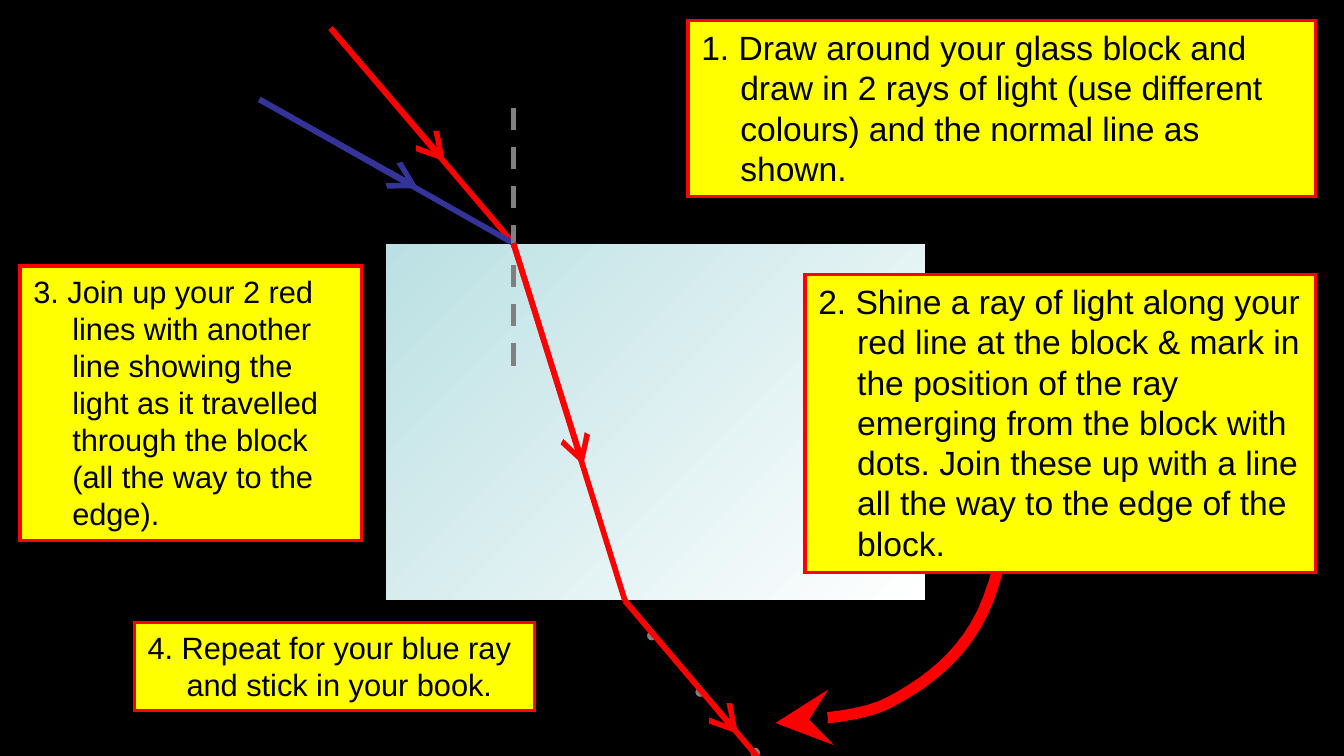
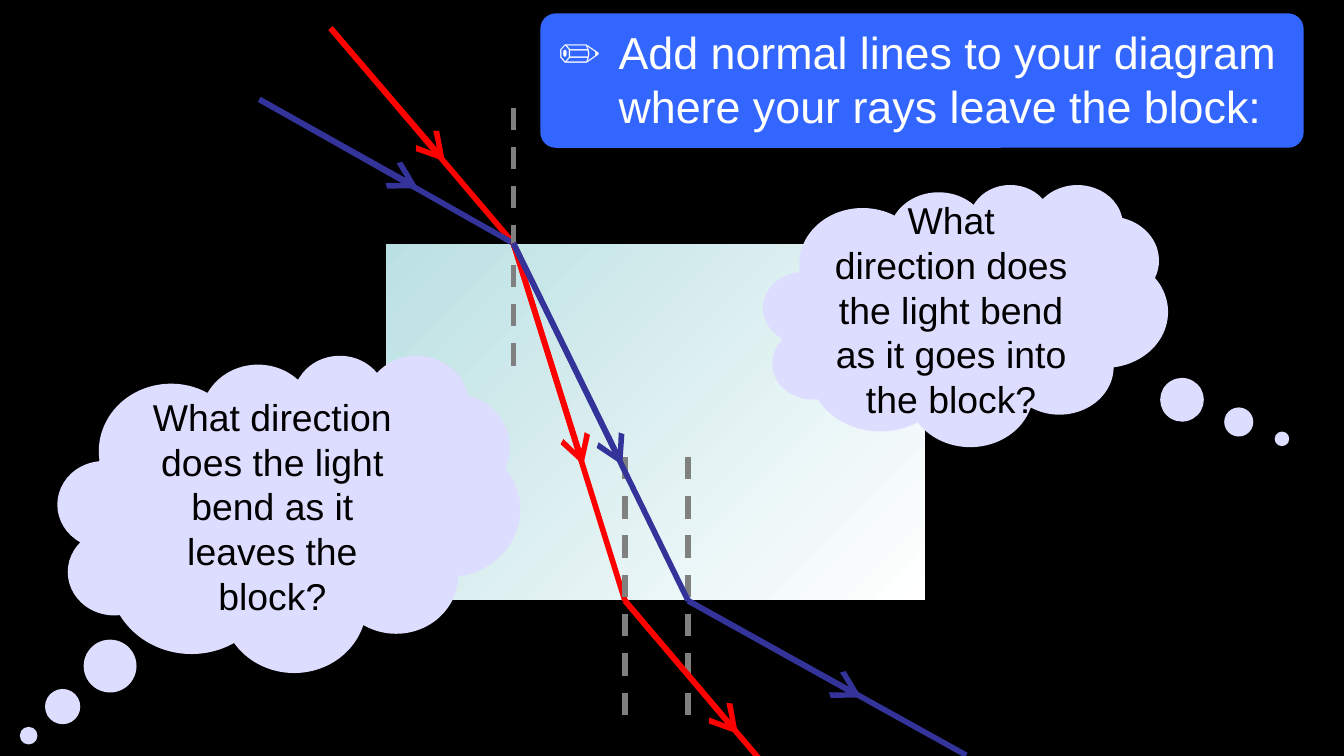
from pptx import Presentation
from pptx import util as u
from pptx.dml.color import RGBColor
from pptx.enum import dml, shapes, text
from pptx.oxml import ns
from lxml import etree

BLACK = RGBColor(0x00, 0x00, 0x00)
WHITE = RGBColor(0xFF, 0xFF, 0xFF)
RED = RGBColor(0xFF, 0x00, 0x00)
BLUE = RGBColor(0x33, 0x33, 0x99)
GREY = RGBColor(0x80, 0x80, 0x80)
YELLOW = RGBColor(0xFF, 0xFF, 0x00)
GLASS = RGBColor(0xBB, 0xE0, 0xE3)
LILAC = RGBColor(0xDD, 0xDD, 0xFF)
BANNER = RGBColor(0x33, 0x66, 0xFF)

FONT = "Arial"
ENTRY = (3.82, 1.81)
RED_EXIT = (4.65, 4.47)
BLUE_EXIT = (5.12, 4.47)
NORMAL_LENGTH = 2.01


def new_slide(deck):
    slide = deck.slides.add_slide(deck.slide_layouts[6])
    slide.background.fill.solid()
    slide.background.fill.fore_color.rgb = BLACK
    return slide


def add_shape(slide, preset, box, fill=None, outline=None, weight=0.75):
    shape = slide.shapes.add_shape(preset, *[u.Inches(n) for n in box])
    shape.shadow.inherit = False
    if fill is not None:
        shape.fill.solid()
        shape.fill.fore_color.rgb = fill
    if outline is None:
        shape.line.fill.background()
    else:
        shape.line.color.rgb = outline
        shape.line.width = u.Pt(weight)
        etree.SubElement(shape.line._get_or_add_ln(), ns.qn("a:miter"), lim="800000")
    return shape


def write(shape, words, size, color=BLACK, align=text.PP_ALIGN.LEFT,
          anchor=text.MSO_ANCHOR.TOP, hanging=0):
    frame = shape.text_frame
    frame.word_wrap = True
    frame.vertical_anchor = anchor
    paragraph = frame.paragraphs[0]
    paragraph.alignment = align
    if hanging:
        properties = paragraph._p.get_or_add_pPr()
        properties.set("marL", str(u.Inches(hanging)))
        properties.set("indent", str(-u.Inches(hanging)))
    run = paragraph.add_run()
    run.text = words
    run.font.name = FONT
    run.font.size = u.Pt(size)
    run.font.color.rgb = color
    return paragraph


def add_arrowhead(line, kind):
    etree.SubElement(line._get_or_add_ln(), ns.qn("a:tailEnd"),
                     type=kind, w="lg", len="lg")


def add_line(slide, start, end, color, arrow=False, dashed=False):
    line = slide.shapes.add_connector(
        shapes.MSO_CONNECTOR.STRAIGHT, *[u.Inches(n) for n in start + end])
    line.line.color.rgb = color
    line.line.width = u.Pt(3)
    if dashed:
        line.line.dash_style = dml.MSO_LINE.DASH
    if arrow:
        add_arrowhead(line.line, "arrow")
    etree.SubElement(line._element.spPr, ns.qn("a:effectLst"))


def add_ray(slide, start, arrow_tip, end, color):
    add_line(slide, start, arrow_tip, color, arrow=True)
    add_line(slide, start, end, color)


def add_normal(slide, x, top):
    add_line(slide, (x, top), (x, top + NORMAL_LENGTH), GREY, dashed=True)


def add_block_with_incoming_rays(slide):
    block = add_shape(slide, shapes.MSO_SHAPE.RECTANGLE,
                      (2.87, 1.81, 4.02, 2.66), outline=BLACK)
    block.fill.gradient()
    block.fill.gradient_angle = 315
    for stop, color, position in zip(block.fill.gradient_stops, (GLASS, WHITE), (0, 1)):
        stop.color.rgb = color
        stop.position = position
    add_ray(slide, (2.46, 0.21), (3.31, 1.2), ENTRY, RED)
    add_ray(slide, (1.93, 0.74), (3.11, 1.4), ENTRY, BLUE)
    add_normal(slide, ENTRY[0], 0.8)


def add_red_ray_inside(slide):
    add_ray(slide, ENTRY, (4.34, 3.46), RED_EXIT, RED)


def add_red_ray_leaving(slide):
    add_ray(slide, RED_EXIT, (5.49, 5.46), (6, 6.06), RED)


def add_step(slide, box, words, size):
    step = add_shape(slide, shapes.MSO_SHAPE.RECTANGLE, box, YELLOW, RED, 1.75)
    write(step, words, size, hanging=0.29)
    step.text_frame.auto_size = text.MSO_AUTO_SIZE.SHAPE_TO_FIT_TEXT


def add_thought(slide, box, pointer, words):
    cloud = add_shape(slide, shapes.MSO_SHAPE.CLOUD_CALLOUT, box, LILAC)
    cloud.adjustments[0], cloud.adjustments[1] = pointer
    write(cloud, words, 20, align=text.PP_ALIGN.CENTER, anchor=text.MSO_ANCHOR.MIDDLE)


def bezier_point(p0, p1, p2, p3, t):
    s = 1 - t
    return tuple(s**3 * a + 3 * s * s * t * b + 3 * s * t * t * c + t**3 * d
                 for a, b, c, d in zip(p0, p1, p2, p3))


def add_curved_arrow(slide, start, curves, steps=10):
    points = [start]
    for control_1, control_2, end in curves:
        origin = points[-1]
        points += [bezier_point(origin, control_1, control_2, end, i / steps)
                   for i in range(1, steps + 1)]
    corners = [(u.Inches(x), u.Inches(y)) for x, y in points]
    builder = slide.shapes.build_freeform(*corners[0])
    builder.add_line_segments(corners[1:], close=False)
    arrow = builder.convert_to_shape()
    arrow.shadow.inherit = False
    arrow.fill.background()
    arrow.line.color.rgb = RED
    arrow.line.width = u.Pt(6)
    etree.SubElement(arrow.line._get_or_add_ln(), ns.qn("a:round"))
    add_arrowhead(arrow.line, "stealth")


def build_method(slide):
    add_block_with_incoming_rays(slide)
    add_curved_arrow(slide, (7.59, 3.22), [
        ((7.53, 3.72), (7.47, 4.22), (7.31, 4.56)),
        ((7.15, 4.89), (6.89, 5.08), (6.63, 5.22)),
        ((6.38, 5.36), (5.91, 5.35), (5.77, 5.38)),
    ])
    add_step(slide, (5.99, 2.04, 3.8, 2.22),
             "2. Shine a ray of light along your red line at the block & mark in "
             "the position of the ray emerging from the block with dots. Join "
             "these up with a line all the way to the edge of the block.", 18)
    add_step(slide, (5.12, 0.15, 4.67, 1.31),
             "1. Draw around your glass block and draw in 2 rays of light (use "
             "different colours) and the normal line as shown.", 18)
    add_step(slide, (0.15, 1.98, 2.54, 2.04),
             "3. Join up your 2 red lines with another line showing the light as "
             "it travelled through the block (all the way to the edge).", 16.5)
    add_red_ray_inside(slide)
    add_step(slide, (1, 4.63, 2.98, 0.66),
             "4. Repeat for your blue ray and stick in your book.", 16.5)
    for left, top in ((5.18, 5.12), (4.82, 4.7), (5.59, 5.57)):
        add_shape(slide, shapes.MSO_SHAPE.OVAL, (left, top, 0.06, 0.06), GREY, GREY)
    add_red_ray_leaving(slide)


def build_questions(slide):
    add_block_with_incoming_rays(slide)
    add_red_ray_inside(slide)
    add_ray(slide, BLUE_EXIT, (6.41, 5.19), (7.19, 5.62), BLUE)
    for exit_point in (BLUE_EXIT, RED_EXIT):
        add_normal(slide, exit_point[0], 3.4)
    add_ray(slide, ENTRY, (4.63, 3.46), BLUE_EXIT, BLUE)
    add_thought(slide, (5.68, 1.37, 3.01, 1.95), (0.782, 0.472),
                "What direction does the light bend as it goes into the block?")
    add_thought(slide, (0.43, 2.64, 3.44, 2.36), (-0.563, 0.701),
                "What direction does the light bend as it leaves the block?")
    task = add_shape(slide, shapes.MSO_SHAPE.ROUNDED_RECTANGLE,
                     (4.02, 0.1, 5.68, 1), BANNER)
    task.adjustments[0] = 0.115
    instruction = write(
        task, "✏\tAdd normal lines to your diagram where your rays leave the block:",
        24, WHITE, hanging=0.45)
    tabs = etree.SubElement(instruction._p.get_or_add_pPr(), ns.qn("a:tabLst"))
    etree.SubElement(tabs, ns.qn("a:tab"), pos=str(u.Inches(0.45)), algn="l")
    add_red_ray_leaving(slide)


def main():
    deck = Presentation()
    deck.slide_width = u.Inches(10)
    deck.slide_height = deck.slide_width * 9 // 16
    build_method(new_slide(deck))
    build_questions(new_slide(deck))
    deck.save("out.pptx")


if __name__ == "__main__":
    main()
